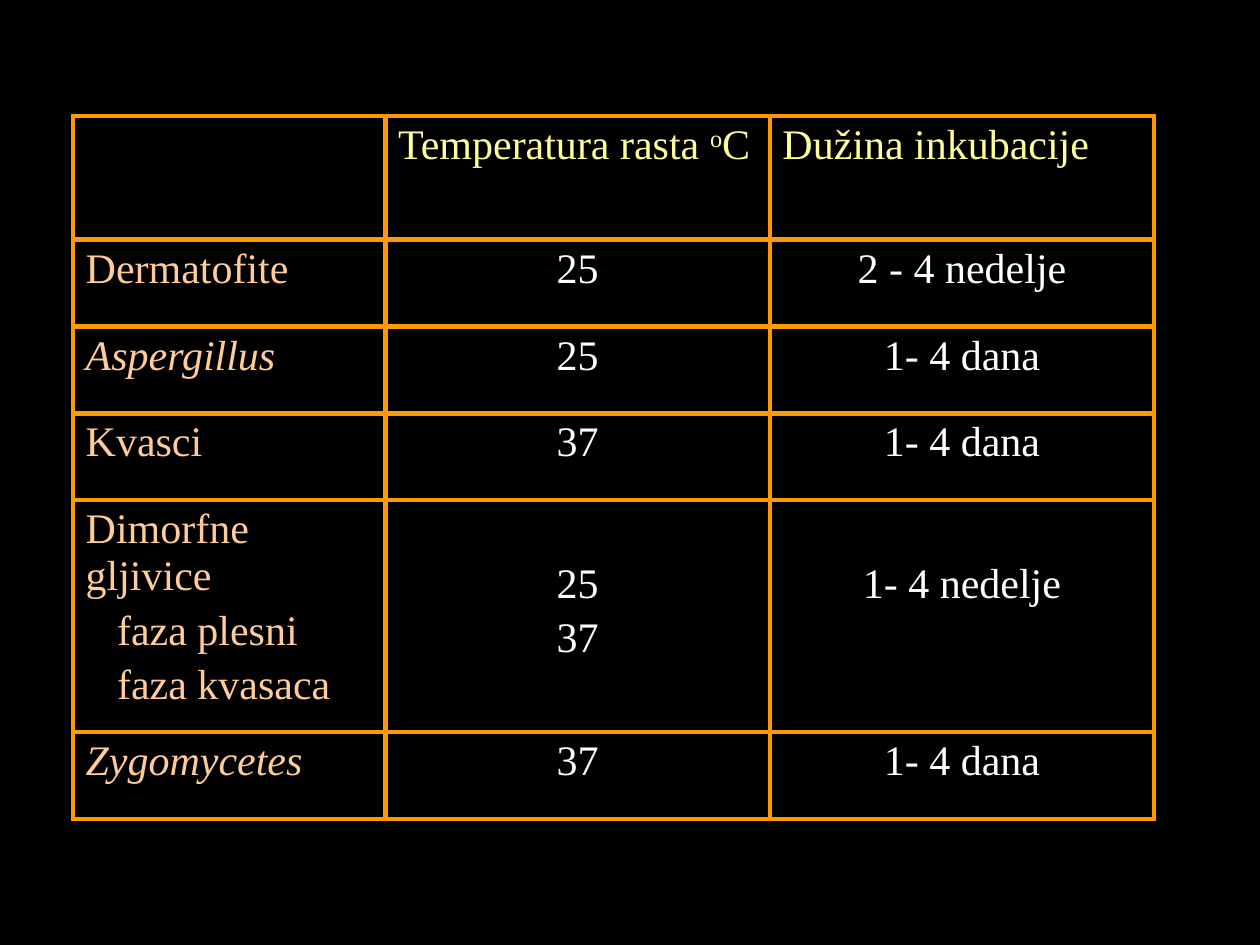
"""Build a slide with a table of fungal growth temperatures and incubation times."""
import pptx
import pptx.dml.color
import pptx.enum.text
import pptx.oxml
import pptx.oxml.ns
import pptx.util

Inches, Pt = pptx.util.Inches, pptx.util.Pt
RGBColor = pptx.dml.color.RGBColor
BLACK = RGBColor(0x00, 0x00, 0x00)
ORANGE = RGBColor(0xFF, 0x99, 0x00)
YELLOW = RGBColor(0xFF, 0xFF, 0x99)
PEACH = RGBColor(0xFF, 0xCC, 0x99)
WHITE = RGBColor(0xFF, 0xFF, 0xFF)
LEFT = pptx.enum.text.PP_ALIGN.LEFT
CENTER = pptx.enum.text.PP_ALIGN.CENTER


def write(p, text, color=WHITE, align=LEFT, italic=False, raised=False, before=0, indent=0):
    p.alignment = align
    p.space_before = Pt(before)
    if indent:
        p._p.get_or_add_pPr().set("marL", str(Inches(indent)))
    r = p.add_run()
    r.text = text
    r.font.name = "Times New Roman"
    r.font.size = Pt(24)
    r.font.italic = italic
    r.font.color.rgb = color
    if raised:
        r._r.get_or_add_rPr().set("baseline", "30000")


def outline(cell):
    tcPr = cell._tc.get_or_add_tcPr()
    for side in ("lnL", "lnR", "lnT", "lnB"):
        tcPr.append(pptx.oxml.parse_xml(
            f'<a:{side} {pptx.oxml.ns.nsdecls("a")} w="{Pt(3)}"><a:solidFill>'
            f'<a:srgbClr val="{ORANGE}"/></a:solidFill></a:{side}>'))
    cell.fill.background()


prs = pptx.Presentation()
prs.slide_width, prs.slide_height = Inches(10), Inches(7.5)
s = prs.slides.add_slide(prs.slide_layouts[6])
s.background.fill.solid()
s.background.fill.fore_color.rgb = BLACK

col_widths = [2.48, 3.05, 3.05]
row_heights = [0.98, 0.69, 0.69, 0.69, 1.84, 0.69]
table = s.shapes.add_table(len(row_heights), len(col_widths), Inches(0.58), Inches(0.92),
                           Inches(sum(col_widths)), Inches(sum(row_heights))).table
table.first_row = table.horz_banding = False
for column, width in zip(table.columns, col_widths):
    column.width = Inches(width)
for row, height in zip(table.rows, row_heights):
    row.height = Inches(height)
for cell in table.iter_cells():
    outline(cell)

p = table.cell(0, 1).text_frame.paragraphs[0]
write(p, "Temperatura rasta ", color=YELLOW)
write(p, "o", color=YELLOW, raised=True)
write(p, "C", color=YELLOW)
write(table.cell(0, 2).text_frame.paragraphs[0], "Dužina inkubacije", color=YELLOW)

fungi = [
    (["Dermatofite"], ["25"], ["2 - 4 nedelje"]),
    (["Aspergillus"], ["25"], ["1- 4 dana"]),
    (["Kvasci"], ["37"], ["1- 4 dana"]),
    (["Dimorfne gljivice", "faza plesni", "faza kvasaca"], ["25", "37"], ["1- 4 nedelje"]),
    (["Zygomycetes"], ["37"], ["1- 4 dana"]),
]
for i, fungus in enumerate(fungi, 1):
    name = fungus[0][0]
    for j, lines in enumerate(fungus):
        cell = table.cell(i, j)
        tf = cell.text_frame
        if j and len(fungus[0]) > 1:
            cell.margin_top = Inches(0.48)
        for k, line in enumerate(lines):
            p = tf.add_paragraph() if k else tf.paragraphs[0]
            write(p, line, color=WHITE if j else PEACH, align=CENTER if j else LEFT,
                  italic=j == 0 and name in ("Aspergillus", "Zygomycetes"),
                  before=4.8 if k else 0, indent=0.25 if k and j == 0 else 0)

prs.save("out.pptx")
